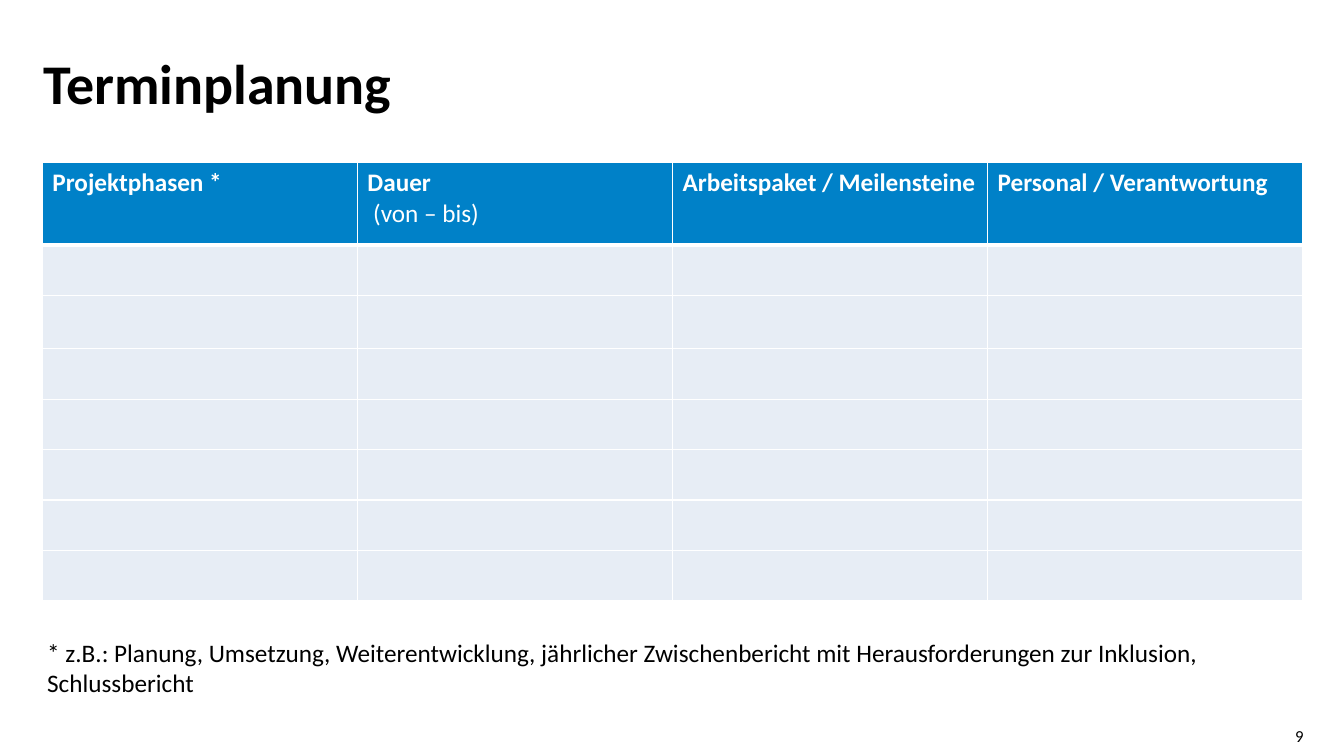
from lxml.etree import SubElement
from pptx import Presentation
from pptx.dml.color import RGBColor
from pptx.enum.text import MSO_ANCHOR, MSO_AUTO_SIZE, PP_ALIGN
from pptx.oxml.ns import qn
from pptx.util import Inches, Pt

COLORS = {"header": "0081C8", "body": "E7EDF5", "white": "FFFFFF", "black": "000000"}
HEADERS = [
    ["Projektphasen *"],
    ["Dauer", " (von – bis)"],
    ["Arbeitspaket / Meilensteine"],
    ["Personal / Verantwortung"],
]
ROW_HEIGHTS = [0.82, 0.5, 0.53] + [0.5] * 5
CONTENT_WIDTH = 12.5


def write_text(paragraph, text, size=18, color="black", bold=False,
               align=PP_ALIGN.LEFT, line_spacing=None):
    paragraph.alignment = align
    paragraph.line_spacing = line_spacing
    run = paragraph.add_run()
    run.text = text
    run.font.name = "Calibri"
    run.font.size = Pt(size)
    run.font.bold = bold
    run.font.color.rgb = RGBColor.from_string(COLORS[color])


def style_cell(cell, fill, bottom_width):
    properties = cell._tc.get_or_add_tcPr()
    for side, width in (("L", 1), ("R", 1), ("T", 1), ("B", bottom_width)):
        line = SubElement(properties, qn(f"a:ln{side}"), w=str(Pt(width)))
        line_fill = SubElement(line, qn("a:solidFill"))
        SubElement(line_fill, qn("a:srgbClr"), val=COLORS["white"])
    cell.fill.solid()
    cell.fill.fore_color.rgb = RGBColor.from_string(COLORS[fill])


presentation = Presentation()
presentation.slide_width = Inches(13.33)
presentation.slide_height = Inches(7.5)
slide = presentation.slides.add_slide(presentation.slide_layouts[5])

title = slide.shapes.title
title.left, title.top = Inches(0.43), Inches(0.56)
title.width, title.height = Inches(10), Inches(0.85)
number = slide.shapes.add_textbox(Inches(12.46), Inches(7.2), Inches(0.47), Inches(0.2))
for shape, anchor in ((title, MSO_ANCHOR.TOP), (number, MSO_ANCHOR.MIDDLE)):
    frame = shape.text_frame
    frame.margin_left = frame.margin_right = frame.margin_top = frame.margin_bottom = 0
    frame.vertical_anchor = anchor
    frame.auto_size = MSO_AUTO_SIZE.NONE
    frame.word_wrap = True
write_text(title.text_frame.paragraphs[0], "Terminplanung", size=40, bold=True, line_spacing=0.9)
write_text(number.text_frame.paragraphs[0], "9", size=12, align=PP_ALIGN.RIGHT)

table = slide.shapes.add_table(
    len(ROW_HEIGHTS), len(HEADERS), Inches(0.42), Inches(1.61),
    Inches(CONTENT_WIDTH), Inches(sum(ROW_HEIGHTS)),
).table
table.horz_banding = False
for column in table.columns:
    column.width = Inches(CONTENT_WIDTH / len(HEADERS))
for row_index, (row, height) in enumerate(zip(table.rows, ROW_HEIGHTS)):
    row.height = Inches(height)
    for cell in row.cells:
        if row_index == 0:
            style_cell(cell, "header", 3)
        else:
            style_cell(cell, "body", 1)

for cell, lines in zip(table.rows[0].cells, HEADERS):
    frame = cell.text_frame
    for index, text in enumerate(lines):
        paragraph = frame.add_paragraph() if index else frame.paragraphs[0]
        write_text(paragraph, text, color="white", bold=index == 0)

footnote = slide.shapes.add_textbox(Inches(0.37), Inches(6.27), Inches(CONTENT_WIDTH), Inches(0.71))
footnote.text_frame.word_wrap = True
footnote.text_frame.auto_size = MSO_AUTO_SIZE.SHAPE_TO_FIT_TEXT
write_text(
    footnote.text_frame.paragraphs[0],
    "* z.B.: Planung, Umsetzung, Weiterentwicklung, jährlicher Zwischenbericht "
    "mit Herausforderungen zur Inklusion, Schlussbericht",
)

presentation.save("out.pptx")
